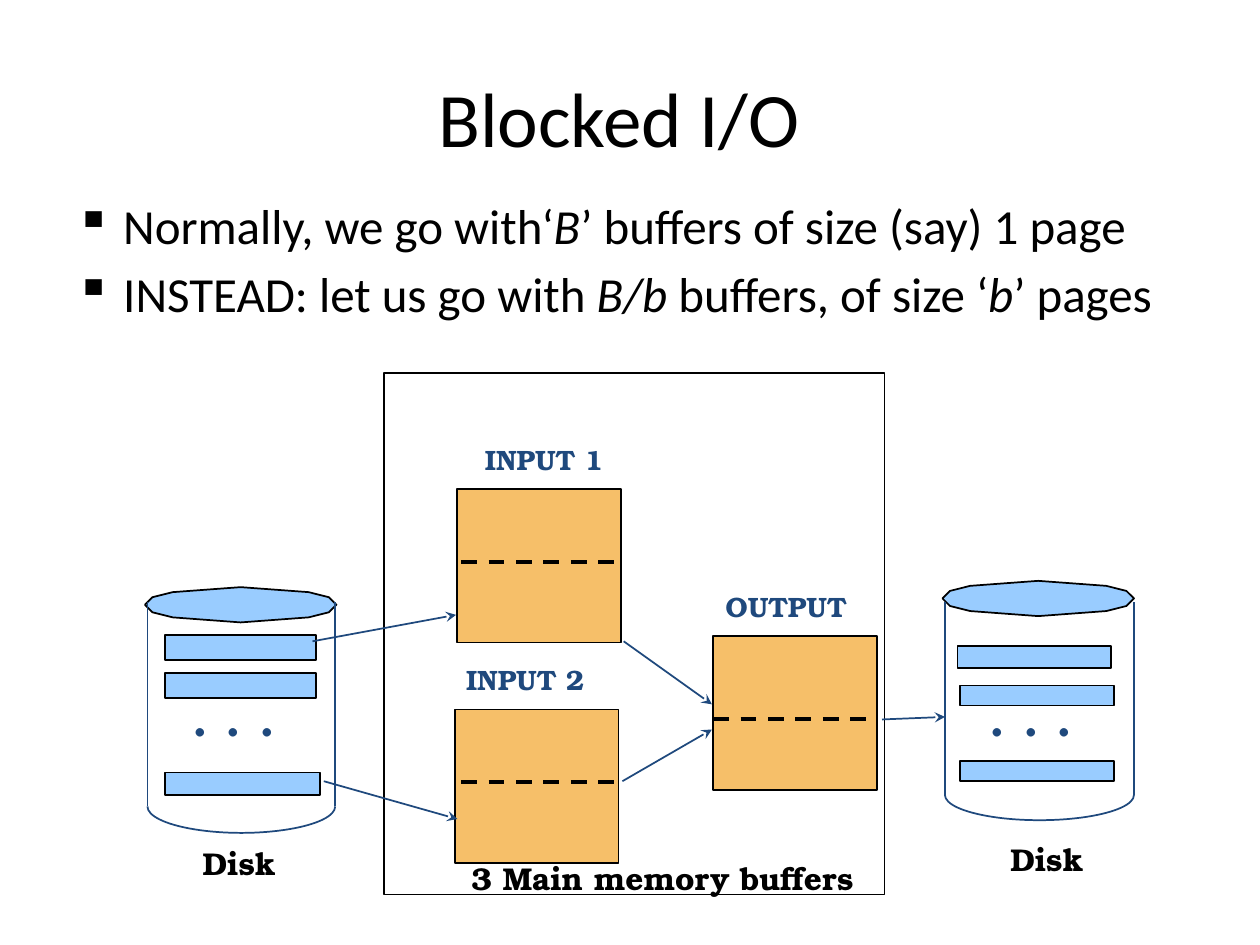
from lxml import etree
from pptx import Presentation
from pptx import util as u
from pptx.dml.color import RGBColor
from pptx.enum import dml, shapes, text
from pptx.oxml.ns import qn

PX = 9144  # EMU per px, 100 px to the inch
BLACK, NAVY, SKY, ORANGE = "000000", "1F497D", "99CCFF", "F6BF69"
SANS, SERIF = "Calibri", "TeX Gyre Bonum"

TITLE = "Blocked I/O"
# Each bullet is a list of (words, italic).
BULLETS = [
    [("Normally, we go with‘", False), ("B", True),
     ("’ buffers of size (say) 1 page", False)],
    [("INSTEAD: let us go with ", False), ("B/b", True),
     (" buffers, of size ‘", False), ("b", True), ("’ pages", False)],
]
MEMORY = (305, 296, 397, 414)
BUFFER_SIZE = (130, 122)
BUFFERS = [(363, 388), (361, 563), (566, 505)]
BUFFER_SPLITS = [(366, 446), (366, 621), (566, 571)]
SPLIT_WIDTH = 125
DISKS = [
    dict(lid=(191, 480), sides=(117, 266), wall=(478, 640), base=661,
         pages=[(131, 504, 120, 20), (131, 534, 120, 20), (131, 613, 123, 18)]),
    dict(lid=(824, 475), sides=(750, 900), wall=(478, 631), base=651,
         pages=[(760, 513, 122, 17), (762, 544, 122, 16), (762, 604, 122, 16)]),
]
LID_QUARTER = [(76, 0), (70, 6), (54, 10), (0, 14)]
ARROWS = [
    (248, 509, 362, 488), (257, 620, 363, 650),
    (495, 509, 565, 559), (494, 620, 565, 579),
    (700, 571, 750, 569),
]
# words, box, size, font, colour, bold
LABELS = [
    ("INPUT 1", (375, 346, 114, 36), 16, SERIF, NAVY, True),
    ("INPUT 2", (360, 521, 115, 37), 16, SERIF, NAVY, True),
    ("OUTPUT", (566, 463, 116, 36), 16, SERIF, NAVY, True),
    ("3 Main memory buffers", (364, 677, 335, 40), 18, SERIF, BLACK, True),
    ("Disk", (151, 665, 78, 40), 18, SERIF, BLACK, True),
    ("Disk", (792, 662, 78, 40), 18, SERIF, BLACK, True),
    (". . .", (142, 524, 89, 76), 40, SANS, NAVY, False),
    (". . .", (775, 524, 91, 76), 40, SANS, NAVY, False),
]


def rgb(colour):
    return RGBColor.from_string(colour)


def emu(lengths):
    return [u.Emu(n * PX) for n in lengths]


def paint(shape, fill, line):
    shape.shadow.inherit = False
    if fill:
        shape.fill.solid()
        shape.fill.fore_color.rgb = rgb(fill)
    else:
        shape.fill.background()
    shape.line.color.rgb = rgb(line)
    shape.line.width = u.Pt(1)


def add_box(slide, box, fill=None):
    rectangle = slide.shapes.add_shape(shapes.MSO_SHAPE.RECTANGLE, *emu(box))
    paint(rectangle, fill, BLACK)


def add_line(slide, ends, colour=NAVY, width=1, arrow=False, dashed=False):
    line = slide.shapes.add_connector(shapes.MSO_CONNECTOR.STRAIGHT, *emu(ends))
    line.line.color.rgb = rgb(colour)
    line.line.width = u.Pt(width)
    if dashed:
        line.line.dash_style = dml.MSO_LINE.DASH
    if arrow:
        etree.SubElement(line.line._get_or_add_ln(), qn("a:tailEnd"), type="stealth")
    etree.SubElement(line._element.spPr, qn("a:effectLst"))


def add_run(paragraph, words, size, font, colour, bold=False, italic=False):
    run = paragraph.add_run()
    run.text = words
    run.font.size = u.Pt(size)
    run.font.name = font
    run.font.color.rgb = rgb(colour)
    run.font.bold = bold
    run.font.italic = italic


def add_label(slide, words, box, *style):
    frame = slide.shapes.add_textbox(*emu(box)).text_frame
    frame.word_wrap = False
    frame.auto_size = text.MSO_AUTO_SIZE.SHAPE_TO_FIT_TEXT
    add_run(frame.paragraphs[0], words, *style)


def add_bullets(slide):
    frame = slide.shapes.add_textbox(*emu((50, 150, 933, 567))).text_frame
    frame.word_wrap = True
    for index, bullet in enumerate(BULLETS):
        paragraph = frame.add_paragraph() if index else frame.paragraphs[0]
        paragraph.space_before = u.Pt(5.6)
        properties = paragraph._p.get_or_add_pPr()
        properties.set("marL", str(38 * PX))
        properties.set("indent", str(-38 * PX))
        etree.SubElement(properties, qn("a:buChar"), char="▪")
        for words, italic in bullet:
            add_run(paragraph, words, 28, SANS, BLACK, italic=italic)


def add_disk(slide, lid, sides, wall, base, pages):
    x, y = lid
    upper = [(dx, -dy) for dx, dy in LID_QUARTER]
    upper += [(-dx, dy) for dx, dy in upper[-2::-1]]
    lower = [(dx, -dy) for dx, dy in upper[-2:0:-1]]
    outline = [(x + dx, y + dy) for dx, dy in upper + lower]
    builder = slide.shapes.build_freeform(*outline[0], scale=PX)
    builder.add_line_segments(outline[1:], close=True)
    paint(builder.convert_to_shape(), SKY, BLACK)

    top, bottom = wall
    left, right = sides
    for side in sides:
        add_line(slide, (side, top, side, bottom))
    depth = base - bottom
    curve = slide.shapes.add_shape(
        shapes.MSO_SHAPE.ARC, *emu((left, bottom - depth, right - left, 2 * depth)))
    curve.adjustments[0] = 0
    curve.adjustments[1] = 108  # half a turn: 180 degrees of 60000 units
    paint(curve, None, NAVY)
    for page in pages:
        add_box(slide, page, SKY)


def main():
    deck = Presentation()
    deck.slide_width, deck.slide_height = emu((1000, 750))
    slide = deck.slides.add_slide(deck.slide_layouts[5])
    title = slide.shapes.title
    title.left, title.top, title.width, title.height = emu((0, 30, 983, 125))
    title.text_frame.vertical_anchor = text.MSO_ANCHOR.MIDDLE
    title.text_frame.paragraphs[0].alignment = text.PP_ALIGN.CENTER
    add_run(title.text_frame.paragraphs[0], TITLE, 44, SANS, BLACK)
    add_bullets(slide)

    for corner in BUFFERS:
        add_box(slide, corner + BUFFER_SIZE, ORANGE)
    add_box(slide, MEMORY)
    for disk in DISKS:
        add_disk(slide, **disk)
    for label in LABELS:
        add_label(slide, *label)
    for ends in ARROWS:
        add_line(slide, ends, arrow=True)
    for x, y in BUFFER_SPLITS:
        add_line(slide, (x, y, x + SPLIT_WIDTH, y), BLACK, 2.25, dashed=True)
    deck.save("out.pptx")


if __name__ == "__main__":
    main()
